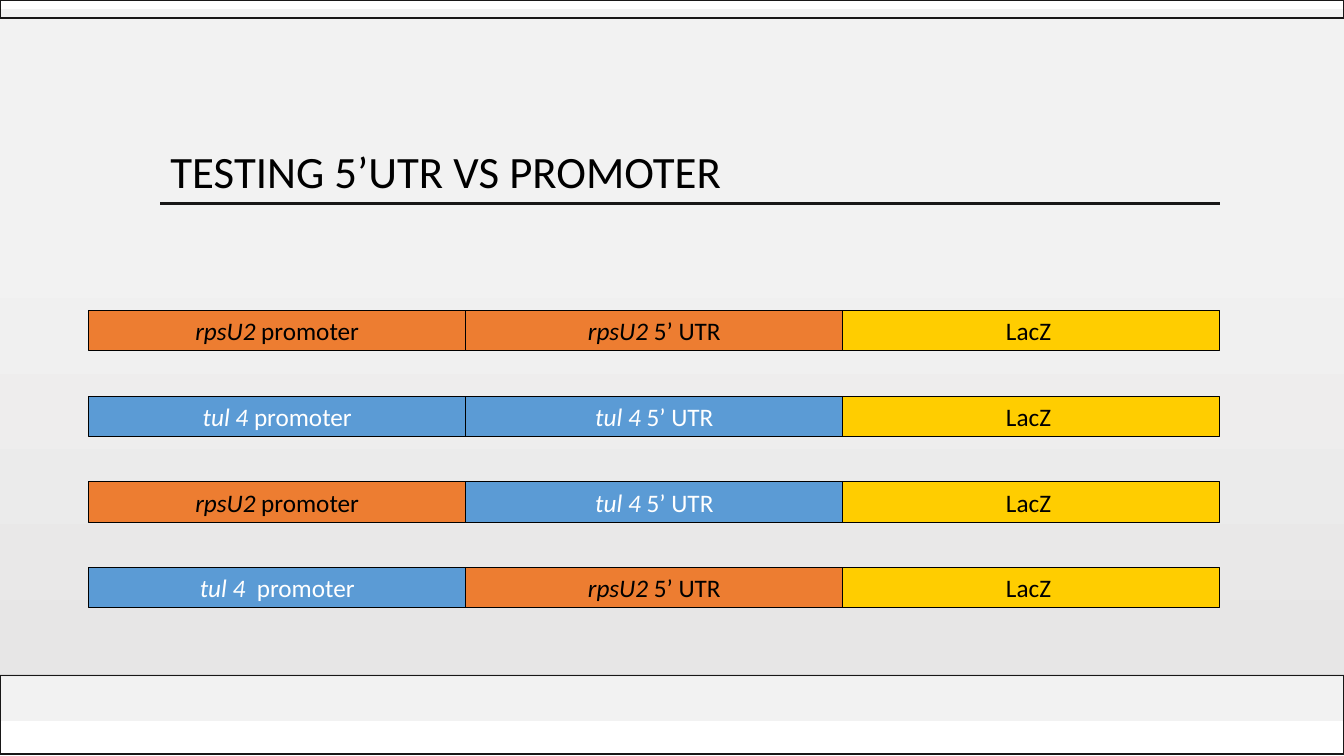
from lxml.etree import SubElement as Sub
from pptx import Presentation
from pptx.dml.color import RGBColor as RGB
from pptx.enum.shapes import MSO_CONNECTOR as Conn, MSO_SHAPE as Kind
from pptx.enum.text import MSO_ANCHOR as Anchor, PP_ALIGN as Align
from pptx.oxml.ns import qn
from pptx.util import Inches, Pt

TITLE = "TESTING 5’UTR VS PROMOTER"
FONT = "Calibri"
HUES = {"orange": "ED7D31", "blue": "5B9BD5", "gold": "FFCD00", "black": "000000",
        "white": "FFFFFF", "ink": "181717", "pale": "F2F2F2", "grey": "E7E6E6"}
GENES = [
    [("orange", "rpsU2", " promoter"), ("orange", "rpsU2", " 5’ UTR"), ("gold", "", "LacZ ")],
    [("blue", "tul 4 ", "promoter"), ("blue", "tul 4", " 5’ UTR"), ("gold", "", "LacZ ")],
    [("orange", "rpsU2", " promoter"), ("blue", "tul 4 ", "5’ UTR"), ("gold", "", "LacZ ")],
    [("blue", "tul 4  ", "promoter"), ("orange", "rpsU2", " 5’ UTR"), ("gold", "", "LacZ ")],
]
WIDE, HIGH = 13.33, 7.5
LEFT, TOP, CELL, BAR, STEP = 0.88, 3.08, 3.74, 0.4, 0.85
FLOOR = 6.7


def hue(name):
    return RGB.from_string(HUES[name])


def add_box(x, y, w, h, fill=None, line=None, width=1):
    box = slide.shapes.add_shape(Kind.RECTANGLE, Inches(x), Inches(y), Inches(w), Inches(h))
    box.shadow.inherit = False
    if fill:
        box.fill.solid()
        box.fill.fore_color.rgb = hue(fill)
    else:
        box.fill.background()
    if line:
        box.line.color.rgb = hue(line)
        box.line.width = Pt(width)
    else:
        box.line.fill.background()
    return box


def add_rule(x, y, end, color, width):
    rule = slide.shapes.add_connector(Conn.STRAIGHT, Inches(x), Inches(y), Inches(end), Inches(y))
    rule.line.color.rgb = hue(color)
    rule.line.width = Pt(width)
    Sub(rule._element.spPr, qn("a:effectLst"))
    return rule


def add_part(x, y, color, gene, label):
    part = add_box(x, y, CELL, BAR, color, "black", 0.75)
    frame = part.text_frame
    frame.word_wrap = True
    frame.vertical_anchor = Anchor.MIDDLE
    frame.margin_left = frame.margin_right = Inches(0.1)
    frame.margin_top = frame.margin_bottom = Inches(0.1)
    para = frame.paragraphs[0]
    para.alignment = Align.CENTER
    para.font.name = FONT
    para.font.size = Pt(18)
    para.font.color.rgb = hue("white" if color == "blue" else "black")
    if gene:
        run = para.add_run()
        run.text = gene
        run.font.italic = True
    para.add_run().text = label


deck = Presentation()
deck.slide_width, deck.slide_height = Inches(WIDE), Inches(HIGH)
slide = deck.slides.add_slide(deck.slide_layouts[5])

add_box(0, 0.1, WIDE, 7.04, "pale", "pale", 1.25)
shade = add_box(0, 2.21, WIDE, FLOOR - 2.21)
shade.fill.gradient()
shade.fill.gradient_angle = 270
for stop, name in zip(shade.fill.gradient_stops, ("pale", "grey")):
    stop.color.rgb = hue(name)
edge = add_rule(0, FLOOR, WIDE, "black", 1)
tint = edge._element.spPr.find(".//" + qn("a:srgbClr"))
Sub(tint, qn("a:alpha"), val="20000")
add_box(0, FLOOR, WIDE, 0.78, line="ink")
add_box(0, 0, WIDE, 0.18, line="ink")
add_rule(1.59, 2.02, 12.1, "ink", 2.5)

title = slide.shapes.title
title._element.getparent().append(title._element)
title.left, title.top, title.width, title.height = map(Inches, (1.59, 1.43, 10.5, 0.6))
title.text_frame.text = TITLE
title.text_frame.word_wrap = True
title.text_frame.vertical_anchor = Anchor.MIDDLE
head = title.text_frame.paragraphs[0]
head.alignment = Align.LEFT
head.line_spacing = 0.9
head.font.name = FONT
head.font.size = Pt(32)
head.font.color.rgb = hue("black")

for row, parts in enumerate(GENES):
    for col, part in enumerate(parts):
        add_part(LEFT + col * CELL, TOP + row * STEP, *part)

deck.save("out.pptx")
